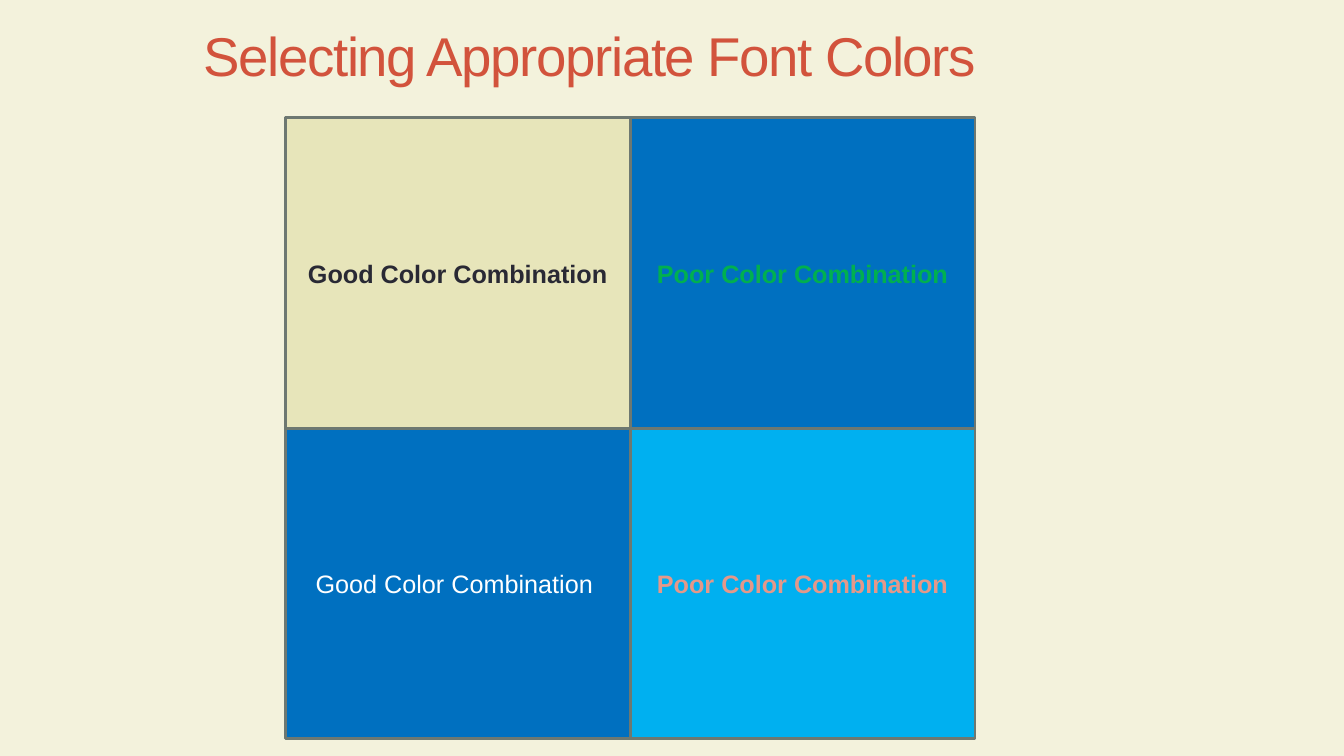
from pptx import Presentation
from pptx.dml.color import RGBColor
from pptx.enum.shapes import MSO_SHAPE as Shape
from pptx.enum.text import MSO_ANCHOR as Anchor, PP_ALIGN as Align
from pptx.util import Inches, Pt

CREAM = RGBColor(0xF3, 0xF2, 0xDC)
RED = RGBColor(0xD2, 0x53, 0x3C)
SAND = RGBColor(0xE7, 0xE5, 0xBA)
GREY = RGBColor(0x6D, 0x78, 0x71)
DARK = RGBColor(0x29, 0x29, 0x34)
BLUE = RGBColor(0x00, 0x70, 0xC0)
GREEN = RGBColor(0x00, 0xB0, 0x50)
WHITE = RGBColor(0xFF, 0xFF, 0xFF)
SKY = RGBColor(0x00, 0xB0, 0xF0)
SALMON = RGBColor(0xE4, 0x98, 0x8A)

# Grid of colour samples
LEFT, TOP = 2.83, 1.17
WIDTH, HEIGHT = 3.42, 3.08
SAMPLES = [
    [("Good Color Combination", SAND, DARK, True),
     ("Poor Color Combination", BLUE, GREEN, True)],
    [("Good Color Combination ", BLUE, WHITE, False),
     ("Poor Color Combination", SKY, SALMON, True)],
]


def write(s, text, *, size, color, bold=False, align=Align.LEFT, spacing=None):
    tf = s.text_frame
    tf.word_wrap = True
    tf.vertical_anchor = Anchor.MIDDLE
    p = tf.paragraphs[0]
    p.alignment = align
    r = p.add_run()
    r.text = text
    r.font.name = "Arial"
    r.font.size = Pt(size)
    r.font.bold = bold
    r.font.color.rgb = color
    if spacing is not None:
        r.font._element.set("spc", str(round(spacing * 100)))


def add_title(slide, text):
    s = slide.shapes.title
    s.left, s.top = Inches(1.92), Inches(0.17)
    s.width, s.height = Inches(9), Inches(0.75)
    write(s, text, size=39, color=RED, spacing=-1)


def add_sample(slide, row, col, text, fill, color, bold):
    s = slide.shapes.add_shape(
        Shape.RECTANGLE, Inches(LEFT + col * WIDTH), Inches(TOP + row * HEIGHT),
        Inches(WIDTH), Inches(HEIGHT))
    s.shadow.inherit = False
    s.fill.solid()
    s.fill.fore_color.rgb = fill
    s.line.color.rgb = GREY
    s.line.width = Pt(2.08)
    write(s, text, size=18, color=color, bold=bold, align=Align.CENTER)


def main():
    prs = Presentation()
    prs.slide_width, prs.slide_height = Inches(13.33), Inches(7.5)
    slide = prs.slides.add_slide(prs.slide_layouts[5])

    # Background
    slide.background.fill.solid()
    slide.background.fill.fore_color.rgb = CREAM

    add_title(slide, "Selecting Appropriate Font Colors")
    for row, samples in enumerate(SAMPLES):
        for col, sample in enumerate(samples):
            add_sample(slide, row, col, *sample)

    prs.save("out.pptx")


if __name__ == "__main__":
    main()
